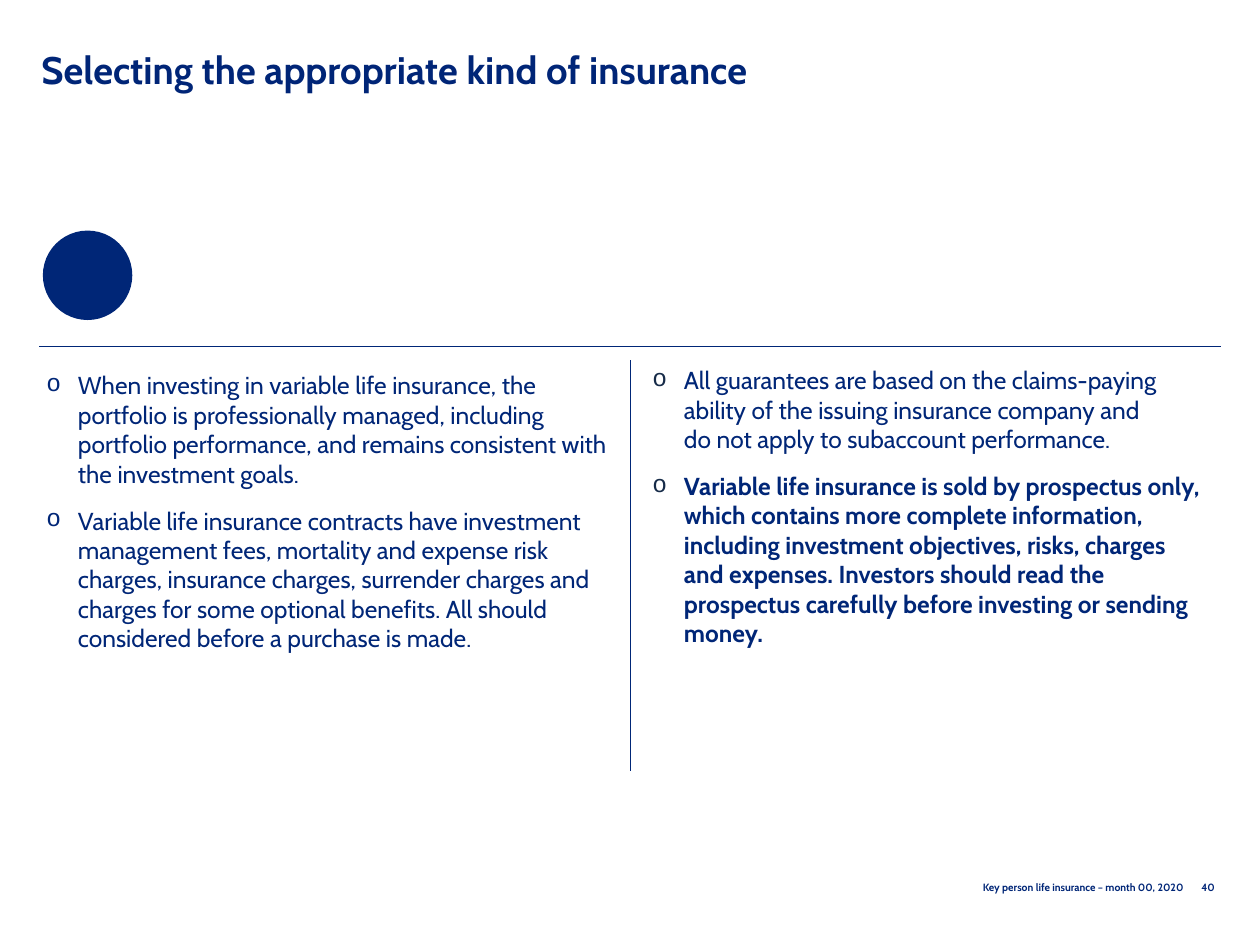
"""Build the slide on selecting the appropriate kind of insurance."""
import pptx
import pptx.util
import pptx.dml.color
import pptx.enum.shapes
import pptx.enum.text
import pptx.oxml
import pptx.oxml.ns
from lxml import etree

Inches, Pt = pptx.util.Inches, pptx.util.Pt
RGBColor = pptx.dml.color.RGBColor
Align, Anchor = pptx.enum.text.PP_ALIGN, pptx.enum.text.MSO_ANCHOR
qn = pptx.oxml.ns.qn

TITLE_BLUE = RGBColor(0x00, 0x25, 0x77)
BLUE = RGBColor(0x00, 0x26, 0x77)
SLATE = RGBColor(0x16, 0x2B, 0x48)
FONT = "Cabin"
WIDTH, HEIGHT = 10, 7.5

TITLE = "Selecting the appropriate kind of insurance"
FOOTER = "Key person life insurance – month 00, 2020"
PAGE = "40"
COLUMNS = [
    {"box": (0.26, 2.89, 4.69, 3.11), "bullet": BLUE, "points": [
        ("When investing in variable life insurance, the portfolio is professionally managed, "
         "including portfolio performance, and remains consistent with the investment goals.", False),
        ("Variable life insurance contracts have investment management fees, mortality and expense "
         "risk charges, insurance charges, surrender charges and charges for some optional benefits. "
         "All should considered before a purchase is made.", False)]},
    {"box": (5.07, 2.85, 4.57, 3.15), "bullet": SLATE, "points": [
        ("All guarantees are based on the claims-paying ability of the issuing insurance company and \n"
         "do not apply to subaccount performance.", False),
        ("Variable life insurance is sold by prospectus only, which contains more complete information, "
         "including investment objectives, risks, charges and expenses. Investors should read the "
         "prospectus carefully before investing or sending money.", True)]},
]
MARGIN, RULE_Y = 0.31, 2.75
RULES = [(MARGIN, RULE_Y, WIDTH - MARGIN, RULE_Y), (WIDTH / 2, 2.86, WIDTH / 2, 6.12)]
DOT = (0.34, 1.83, 0.71, 0.71)


def add_frame(slide, box, anchor=Anchor.TOP):
    frame = slide.shapes.add_textbox(*map(Inches, box)).text_frame
    frame.word_wrap = True
    frame.vertical_anchor = anchor
    return frame


def write(paragraph, text, size, color, bold):
    for index, line in enumerate(text.split("\n")):
        if index:
            paragraph.add_line_break()
        run = paragraph.add_run()
        run.text = line
        run.font.name, run.font.size, run.font.bold = FONT, Pt(size), bold
        run.font.color.rgb = color


def add_bullet(paragraph, color):
    properties = paragraph._p.get_or_add_pPr()
    properties.set("marL", str(Inches(0.26)))
    properties.set("indent", str(-Inches(0.25)))
    bullet_color = etree.SubElement(properties, qn("a:buClr"))
    etree.SubElement(bullet_color, qn("a:srgbClr"), val=str(color))
    etree.SubElement(properties, qn("a:buFont"), typeface="Courier New")
    etree.SubElement(properties, qn("a:buChar"), char="o")


def add_column(slide, column):
    frame = add_frame(slide, column["box"])
    for index, (text, bold) in enumerate(column["points"]):
        paragraph = frame.add_paragraph() if index else frame.paragraphs[0]
        add_bullet(paragraph, column["bullet"])
        if index:
            paragraph.space_before = Pt(10)
        write(paragraph, text, 14, BLUE, bold)


def add_rule(slide, ends):
    rule = slide.shapes.add_connector(
        pptx.enum.shapes.MSO_CONNECTOR.STRAIGHT, *map(Inches, ends))
    rule.line.color.rgb = BLUE
    rule.line.width = Pt(0.5)
    etree.SubElement(rule._element.spPr, qn("a:effectLst"))


def main():
    deck = pptx.Presentation()
    deck.slide_width, deck.slide_height = Inches(WIDTH), Inches(HEIGHT)
    slide = deck.slides.add_slide(deck.slide_layouts[6])

    heading = add_frame(slide, (0.23, 0.42, 9.45, 0.82)).paragraphs[0]
    heading.line_spacing = Pt(18.8)
    write(heading, TITLE, 21.9, TITLE_BLUE, True)

    for text, box, color, anchor in [
            (PAGE, (9.4, 6.94, 0.34, 0.15), TITLE_BLUE, Anchor.TOP),
            (FOOTER, (6.11, 6.94, 3.38, 0.2), BLUE, Anchor.MIDDLE)]:
        note = add_frame(slide, box, anchor).paragraphs[0]
        note.alignment = Align.RIGHT
        write(note, text, 6, color, True)

    for column in COLUMNS:
        add_column(slide, column)
    for ends in RULES:
        add_rule(slide, ends)

    dot = slide.shapes.add_shape(pptx.enum.shapes.MSO_SHAPE.OVAL, *map(Inches, DOT))
    dot.shadow.inherit = False
    dot.fill.solid()
    dot.fill.fore_color.rgb = BLUE
    dot.line.fill.background()

    deck.save("out.pptx")


if __name__ == "__main__":
    main()
